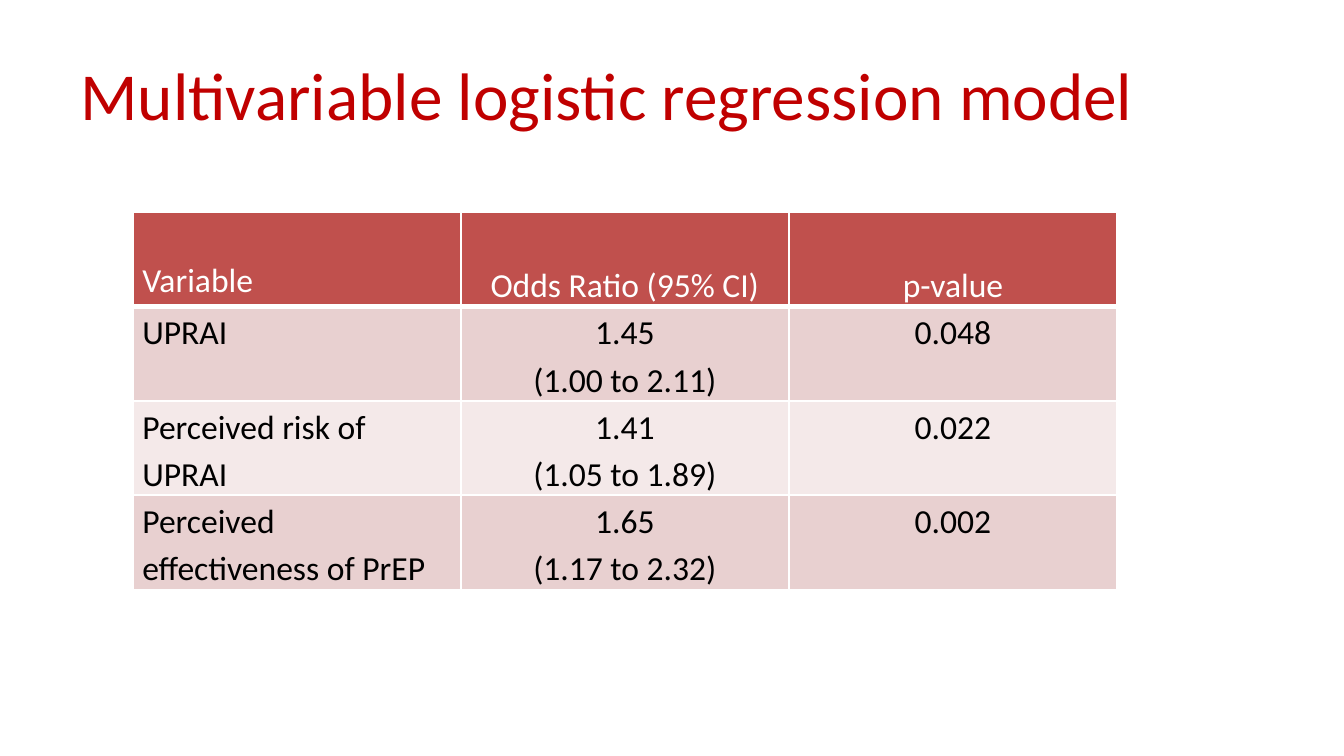
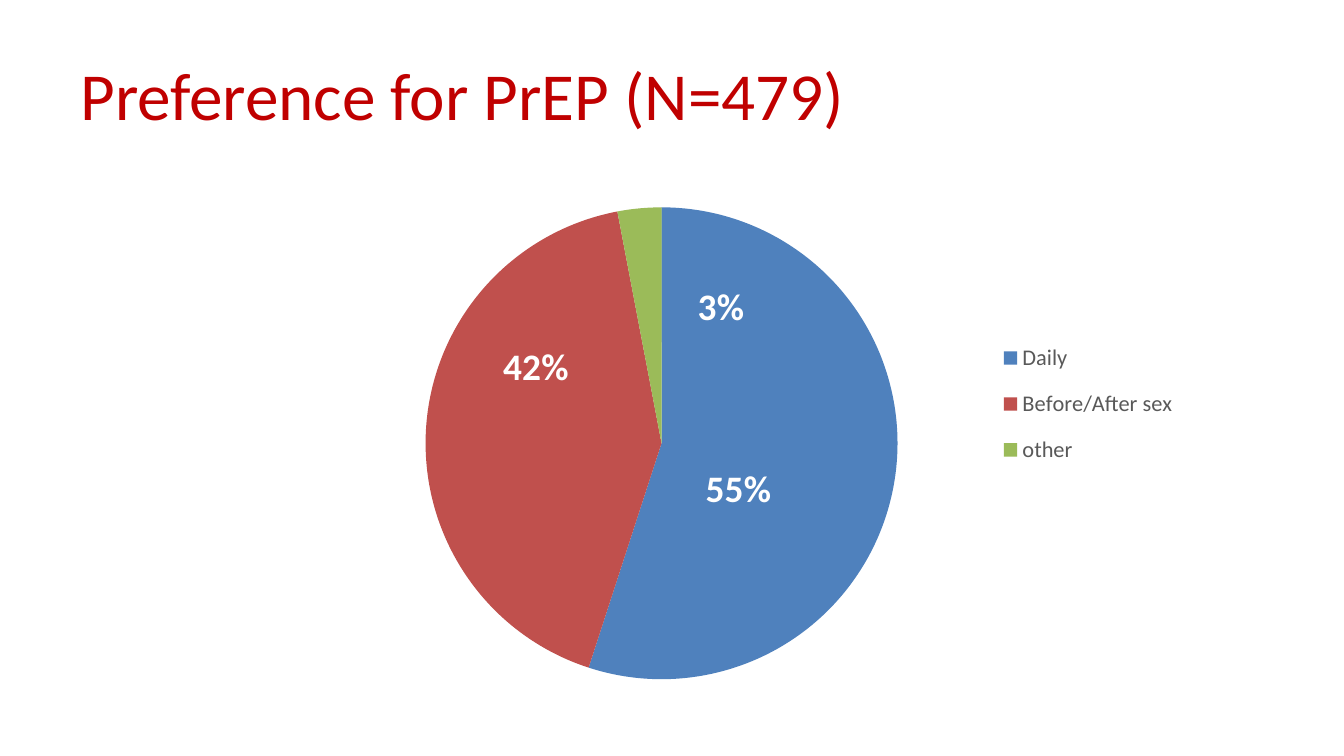
from dataclasses import dataclass
from typing import NamedTuple

from lxml import etree
from pptx import Presentation
from pptx.chart import data as chart_data
from pptx.dml.color import RGBColor
from pptx.enum import chart as chart_enum, text
from pptx.oxml import ns
from pptx.util import Cm, Pt


@dataclass(frozen=True)
class Theme:
    font: str = "Calibri"
    title: str = "C00000"
    header: str = "C0504D"
    bands: tuple[str, str] = ("E8D0D0", "F4E9E9")
    white: str = "FFFFFF"
    black: str = "000000"
    legend: str = "595959"
    title_size: int = 36
    table_size: int = 18
    label_size: int = 20
    legend_size: int = 12
    chart_size: int = 10


class Finding(NamedTuple):
    variable: str
    odds_ratio: str
    interval: str
    p_value: str


class Preference(NamedTuple):
    regimen: str
    percent: int
    color: str
    label_shift: tuple[float, float]  # fractions of the chart's size


THEME = Theme()

HEADINGS = ("Variable", "Odds Ratio (95% CI)", "p-value")
FINDINGS = (
    Finding("UPRAI", "1.45", "(1.00 to 2.11)", "0.048"),
    Finding("Perceived risk of UPRAI", "1.41", "(1.05 to 1.89)", "0.022"),
    Finding("Perceived effectiveness of PrEP", "1.65", "(1.17 to 2.32)", "0.002"),
)
PREFERENCES = (
    Preference("Daily", 55, "4F81BD", (-0.1, 0.06)),
    Preference("Before/After sex", 42, "C0504D", (0.06, -0.11)),
    Preference("other", 3, "9BBB59", (0.05, 0.12)),
)


def style_font(font, size: int, color: str, bold: bool = False) -> None:
    font.name = THEME.font
    font.size = Pt(size)
    font.bold = bold
    font.color.rgb = RGBColor.from_string(color)


def add_titled_slide(deck, heading: str):
    slide = deck.slides.add_slide(deck.slide_layouts[6])
    title = slide.shapes.add_textbox(Cm(1.27), Cm(0.58), Cm(22.86), Cm(2.39))
    frame = title.text_frame
    frame.word_wrap = True
    frame.vertical_anchor = text.MSO_ANCHOR.MIDDLE
    frame.text = heading
    style_font(frame.paragraphs[0].font, THEME.title_size, THEME.title)
    return slide


# Table cells
def set_borders(cell, bottom: float) -> None:
    properties = cell._tc.get_or_add_tcPr()
    widths = {"lnL": 1, "lnR": 1, "lnT": 1, "lnB": bottom}
    for index, (side, width) in enumerate(widths.items()):
        line = etree.Element(ns.qn(f"a:{side}"), w=str(Pt(width)))
        fill = etree.SubElement(line, ns.qn("a:solidFill"))
        etree.SubElement(fill, ns.qn("a:srgbClr"), val=THEME.white)
        properties.insert(index, line)


def fill_cell(cell, content: str, fill: str, color: str, centered: bool) -> None:
    cell.margin_left = cell.margin_right = Cm(0.18)
    cell.margin_top = cell.margin_bottom = 0
    cell.fill.solid()
    cell.fill.fore_color.rgb = RGBColor.from_string(fill)
    cell.text = content
    for paragraph in cell.text_frame.paragraphs:
        paragraph.line_spacing = 1.15
        paragraph.alignment = text.PP_ALIGN.CENTER if centered else text.PP_ALIGN.LEFT
        style_font(paragraph.font, THEME.table_size, color)


def add_regression_table(slide) -> None:
    column_width, row_height = Cm(6.2), Cm(1.78)
    row_count, column_count = len(FINDINGS) + 1, len(HEADINGS)
    table = slide.shapes.add_table(
        row_count, column_count, Cm(2.51), Cm(4.02),
        column_width * column_count, row_height * row_count,
    ).table
    for column in table.columns:
        column.width = column_width
    for row in table.rows:
        row.height = row_height

    for column, heading in enumerate(HEADINGS):
        cell = table.cell(0, column)
        fill_cell(cell, heading, THEME.header, THEME.white, column > 0)
        cell.vertical_anchor = text.MSO_ANCHOR.BOTTOM
        set_borders(cell, bottom=3)
    table.cell(0, 0).margin_bottom = Cm(0.11)

    for row, finding in enumerate(FINDINGS, start=1):
        contents = (
            finding.variable,
            f"{finding.odds_ratio}\n{finding.interval}",
            finding.p_value,
        )
        for column, content in enumerate(contents):
            cell = table.cell(row, column)
            fill_cell(cell, content, THEME.bands[(row - 1) % 2], THEME.black, column > 0)
            set_borders(cell, bottom=1)


# Chart parts
def manual_layout(**settings: float | str):
    layout = etree.Element(ns.qn("c:layout"))
    manual = etree.SubElement(layout, ns.qn("c:manualLayout"))
    for name, value in settings.items():
        etree.SubElement(manual, ns.qn(f"c:{name}"), val=str(value))
    return layout


def style_slices(series) -> None:
    labels = series.data_labels
    labels.show_value = False
    labels.show_percentage = True
    labels.position = chart_enum.XL_LABEL_POSITION.INSIDE_END
    style_font(labels.font, THEME.label_size, THEME.white, bold=True)

    for index, preference in enumerate(PREFERENCES):
        point = series.points[index]
        point.format.fill.solid()
        point.format.fill.fore_color.rgb = RGBColor.from_string(preference.color)
        label = point.data_label
        style_font(label.font, THEME.label_size, THEME.white, bold=True)
        label.position = chart_enum.XL_LABEL_POSITION.INSIDE_END

    label_elements = series._element.findall(f".//{ns.qn('c:dLbl')}")
    for element, preference in zip(label_elements, PREFERENCES):
        element.find(ns.qn("c:showVal")).set("val", "0")
        element.find(ns.qn("c:showPercent")).set("val", "1")
        x, y = preference.label_shift
        element.find(ns.qn("c:idx")).addnext(manual_layout(x=x, y=y))


def add_preference_chart(slide) -> None:
    data = chart_data.CategoryChartData()
    data.categories = [preference.regimen for preference in PREFERENCES]
    data.add_series("Series 1", [preference.percent for preference in PREFERENCES])
    chart = slide.shapes.add_chart(
        chart_enum.XL_CHART_TYPE.PIE, Cm(1.5), Cm(2.54), Cm(21.79), Cm(10.62), data
    ).chart
    chart.has_title = False
    style_font(chart.font, THEME.chart_size, THEME.black)
    pie = chart.plots[0]
    pie.vary_by_categories = True
    style_slices(pie.series[0])

    # Pie placement
    plot_area = chart._chartSpace.find(f".//{ns.qn('c:plotArea')}")
    for layout in plot_area.findall(ns.qn("c:layout")):
        plot_area.remove(layout)
    plot_area.insert(0, manual_layout(
        layoutTarget="inner", xMode="edge", yMode="edge", x=0.3, y=0.13, w=0.41, h=0.84
    ))

    # Legend
    chart.has_legend = True
    legend = chart.legend
    legend.position = chart_enum.XL_LEGEND_POSITION.RIGHT
    legend.include_in_layout = True
    style_font(legend.font, THEME.legend_size, THEME.legend)
    legend_element = legend._element
    for layout in legend_element.findall(ns.qn("c:layout")):
        legend_element.remove(layout)
    legend_element.find(ns.qn("c:legendPos")).addnext(manual_layout(
        xMode="edge", yMode="edge", x=0.79, y=0.34, w=0.17, h=0.28
    ))


def main() -> None:
    deck = Presentation()
    deck.slide_width, deck.slide_height = Cm(25.4), Cm(14.29)
    add_regression_table(add_titled_slide(deck, "Multivariable logistic regression model"))
    add_preference_chart(add_titled_slide(deck, "Preference for PrEP (N=479)"))
    deck.save("out.pptx")


if __name__ == "__main__":
    main()
